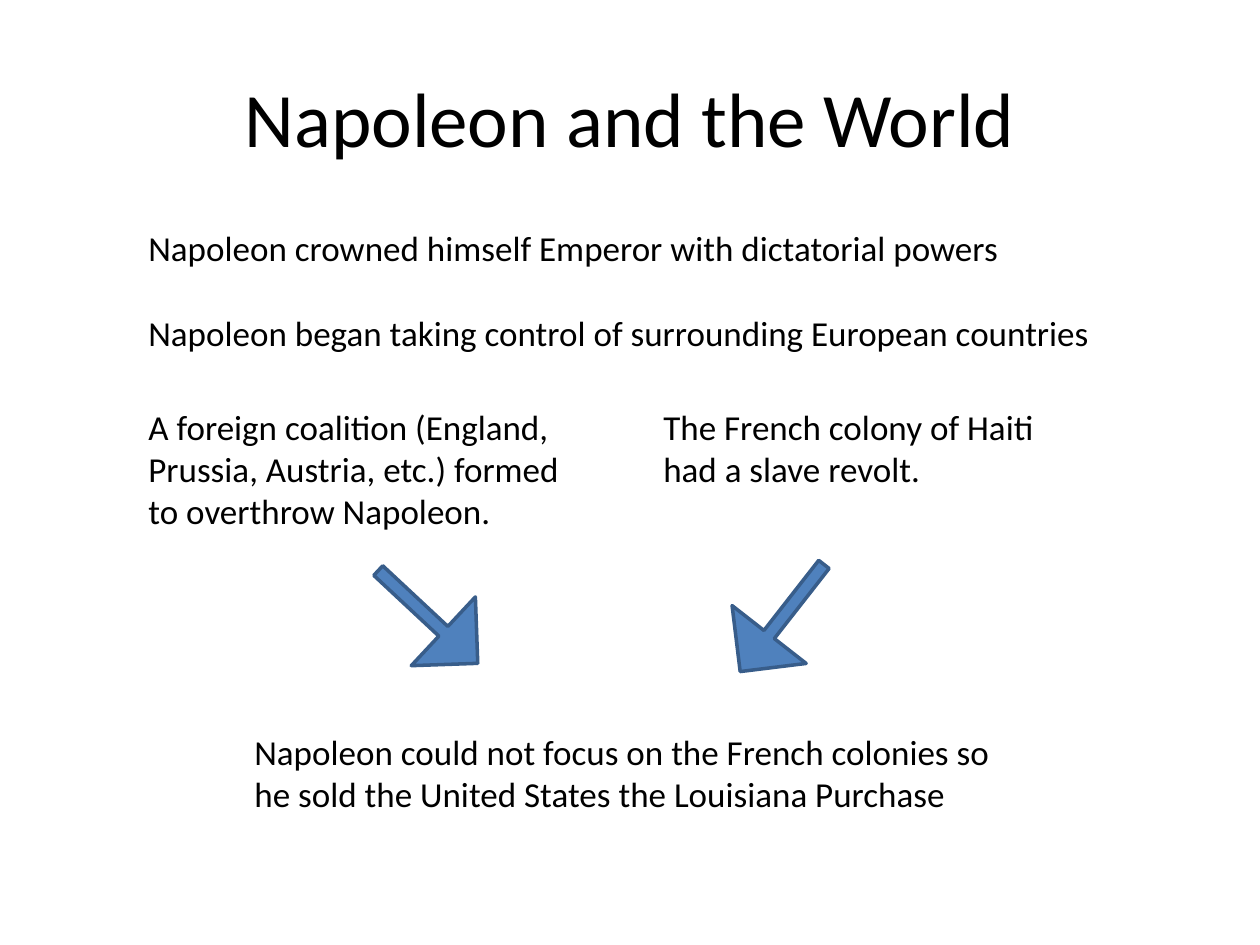
from pptx import Presentation
from pptx.dml.color import RGBColor
from pptx.enum.shapes import MSO_SHAPE
from pptx.enum.text import MSO_ANCHOR, PP_ALIGN
from pptx.util import Emu, Pt

PX_PER_INCH = 126
BLACK = RGBColor(0x00, 0x00, 0x00)
BLUE = RGBColor(0x4F, 0x81, 0xBD)
DARK_BLUE = RGBColor(0x38, 0x5D, 0x8A)

TITLE_FONT = {"name": "Calibri", "size": Pt(44)}
BODY_FONT = {"name": "Calibri", "size": Pt(20)}

LEFT, RIGHT = 136, 651  # left edges of the two columns
CAUSES_TOP = 399

STATEMENTS = [
    ("Napoleon crowned himself Emperor with dictatorial powers",
     (LEFT, 220, 1008, 55)),
    ("Napoleon began taking control of surrounding European countries",
     (LEFT, 305, 998, 55)),
    ("A foreign coalition (England, Prussia, Austria, etc.) formed "
     "to overthrow Napoleon.",
     (LEFT, CAUSES_TOP, 451, 183)),
    ("The French colony of Haiti had a slave revolt.",
     (RIGHT, CAUSES_TOP, 451, 97)),
    ("Napoleon could not focus on the French colonies so he sold "
     "the United States the Louisiana Purchase",
     (242, 724, 798, 140)),
]

# left, top, rotation in degrees
ARROWS = [(360, 570, 43), (714, 571, 128)]


def px(n):
    return Emu(round(n * 914400 / PX_PER_INCH))


def write(tf, text, fmt):
    tf.word_wrap = True
    p = tf.paragraphs[0]
    r = p.add_run()
    r.text = text
    for key, value in fmt.items():
        setattr(r.font, key, value)
    r.font.color.rgb = BLACK
    return p


def add_title(s, text):
    sp = s.shapes.title
    box = {"left": 63, "top": 38, "width": 1134, "height": 157}
    for key, value in box.items():
        setattr(sp, key, px(value))
    sp.text_frame.vertical_anchor = MSO_ANCHOR.MIDDLE
    write(sp.text_frame, text, TITLE_FONT).alignment = PP_ALIGN.CENTER


def add_statement(s, text, box):
    sp = s.shapes.add_textbox(*map(px, box))
    write(sp.text_frame, text, BODY_FONT)


def add_arrow(s, left, top, rotation):
    sp = s.shapes.add_shape(MSO_SHAPE.RIGHT_ARROW,
                            px(left), px(top), px(136), px(94))
    sp.rotation = rotation
    sp.adjustments[0] = 0.14
    sp.adjustments[1] = 0.5
    sp.shadow.inherit = False
    sp.fill.solid()
    sp.fill.fore_color.rgb = BLUE
    sp.line.color.rgb = DARK_BLUE
    sp.line.width = Pt(2)


def main():
    prs = Presentation()
    prs.slide_width, prs.slide_height = px(1260), px(945)
    s = prs.slides.add_slide(prs.slide_layouts[5])

    add_title(s, "Napoleon and the World")

    # Events, causes and outcome
    for text, box in STATEMENTS:
        add_statement(s, text, box)

    # Arrows from both causes to the outcome
    for arrow in ARROWS:
        add_arrow(s, *arrow)

    prs.save("out.pptx")


if __name__ == "__main__":
    main()
